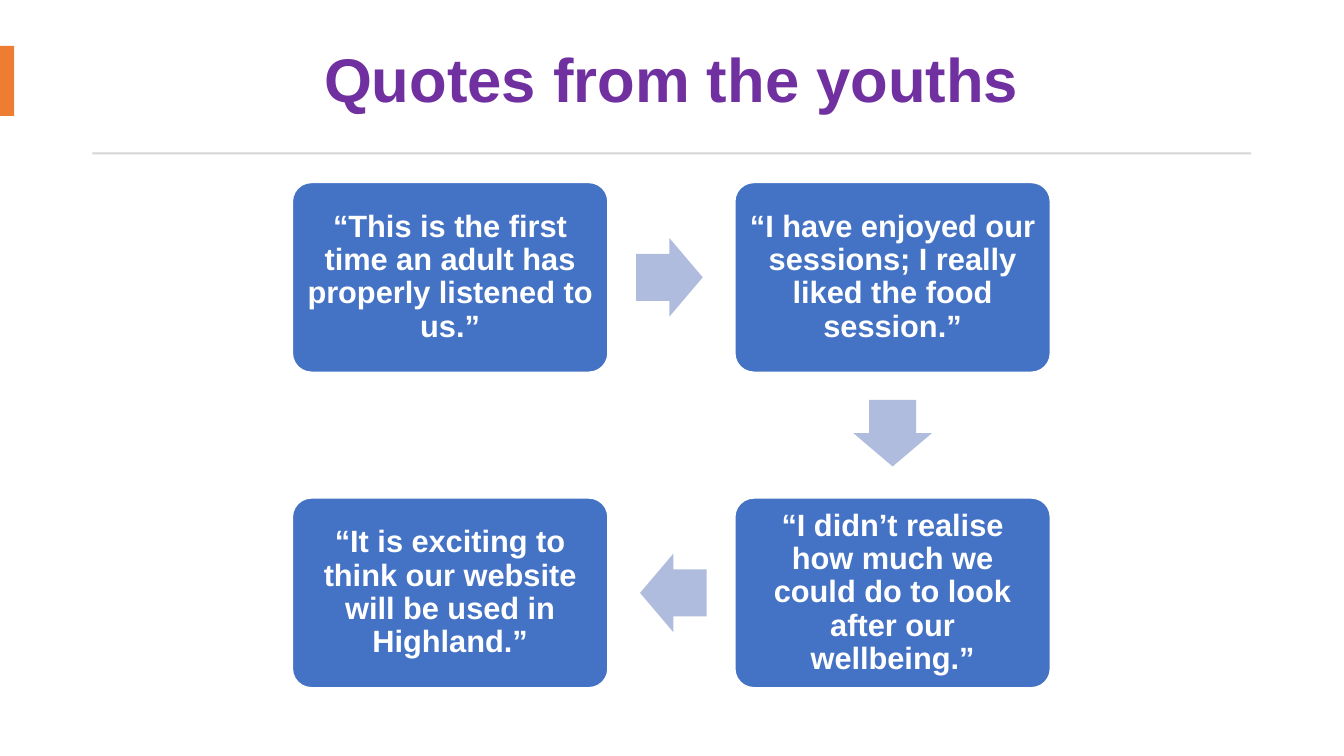
from pptx import Presentation
from pptx.dml.color import RGBColor
from pptx.enum.shapes import MSO_SHAPE
from pptx.enum.text import MSO_ANCHOR, PP_ALIGN
from pptx.util import Cm, Pt

# Content: quotes in reading order, each with its (column, row)
TITLE = "Quotes from the youths"
QUOTES = [
    ("“This is the first time an adult has properly listened to us.”", (0, 0)),
    ("“I have enjoyed our sessions; I really liked the food session.”", (1, 0)),
    ("“I didn’t realise how much we could do to look after our wellbeing.”", (1, 1)),
    ("“It is exciting to think our website will be used in Highland.”", (0, 1)),
]
COLOURS = {
    "title": "7030A0", "accent": "ED7D31", "rule": "D5D5D5",
    "card": "4472C4", "arrow": "B0BCDE", "white": "FFFFFF",
}
TITLE_FONT = {"name": "Arial", "size": Pt(44), "bold": True}
QUOTE_FONT = {"name": "Arial", "size": Pt(22), "bold": True}

# Layout in centimetres
MARGIN, CONTENT_WIDTH = 2.33, 29.2
CARD_LEFT, CARD_TOP = 7.37, 4.6
CARD_WIDTH, CARD_HEIGHT = 7.95, 4.78
COLUMN_STEP, ROW_STEP = 11.15, 7.95
ARROW_LENGTH, ARROW_WIDTH = 1.68, 1.98
ARROW_SHIFT = 0.05  # arrows sit slightly nearer the card they leave
CARD_INSET = 0.23
ROTATIONS = {(1, 0): 0, (0, 1): 90, (-1, 0): 180}


def colour(name):
    return RGBColor.from_string(COLOURS[name])


def add_block(page, kind, fill, left, top, width, height):
    block = page.shapes.add_shape(kind, Cm(left), Cm(top), Cm(width), Cm(height))
    block.shadow.inherit = False
    block.fill.solid()
    block.fill.fore_color.rgb = colour(fill)
    block.line.fill.background()
    return block


def write(box, text, font, font_colour):
    frame = box.text_frame
    frame.word_wrap = True
    frame.vertical_anchor = MSO_ANCHOR.MIDDLE
    para = frame.paragraphs[0]
    para.alignment = PP_ALIGN.CENTER
    para.line_spacing = 0.9
    span = para.add_run()
    span.text = text
    for key, value in font.items():
        setattr(span.font, key, value)
    span.font.color.rgb = colour(font_colour)


def add_card(page, quote, column, row):
    card = add_block(page, MSO_SHAPE.ROUNDED_RECTANGLE, "card",
                     CARD_LEFT + column * COLUMN_STEP, CARD_TOP + row * ROW_STEP,
                     CARD_WIDTH, CARD_HEIGHT)
    card.adjustments[0] = 0.1
    card.line.color.rgb = colour("white")
    card.line.width = Pt(1)
    for side in ("left", "right", "top", "bottom"):
        setattr(card.text_frame, f"margin_{side}", Cm(CARD_INSET))
    write(card, quote, QUOTE_FONT, "white")


def add_arrow(page, start, end):
    step = (end[0] - start[0], end[1] - start[1])
    centre_x = (CARD_LEFT + CARD_WIDTH / 2 + (start[0] + end[0]) / 2 * COLUMN_STEP
                - step[0] * ARROW_SHIFT)
    centre_y = (CARD_TOP + CARD_HEIGHT / 2 + (start[1] + end[1]) / 2 * ROW_STEP
                - step[1] * ARROW_SHIFT)
    arrow = add_block(page, MSO_SHAPE.RIGHT_ARROW, "arrow",
                      centre_x - ARROW_LENGTH / 2, centre_y - ARROW_WIDTH / 2,
                      ARROW_LENGTH, ARROW_WIDTH)
    arrow.adjustments[0] = 0.6
    arrow.adjustments[1] = 0.5
    arrow.rotation = ROTATIONS[step]


def main():
    deck = Presentation()
    deck.slide_width, deck.slide_height = Cm(33.87), Cm(19.05)
    page = deck.slides.add_slide(deck.slide_layouts[6])

    # Title, side accent and rule
    title = page.shapes.add_textbox(Cm(MARGIN), Cm(0.69), Cm(CONTENT_WIDTH), Cm(2.79))
    write(title, TITLE, TITLE_FONT, "title")
    add_block(page, MSO_SHAPE.RECTANGLE, "accent", 0, 1.16, 0.36, 1.76)
    add_block(page, MSO_SHAPE.RECTANGLE, "rule", MARGIN, 3.84, CONTENT_WIDTH, 0.05)

    # Quote cards, each joined to the one before
    previous = None
    for quote, place in QUOTES:
        if previous is not None:
            add_arrow(page, previous, place)
        add_card(page, quote, *place)
        previous = place

    deck.save("out.pptx")


if __name__ == "__main__":
    main()
